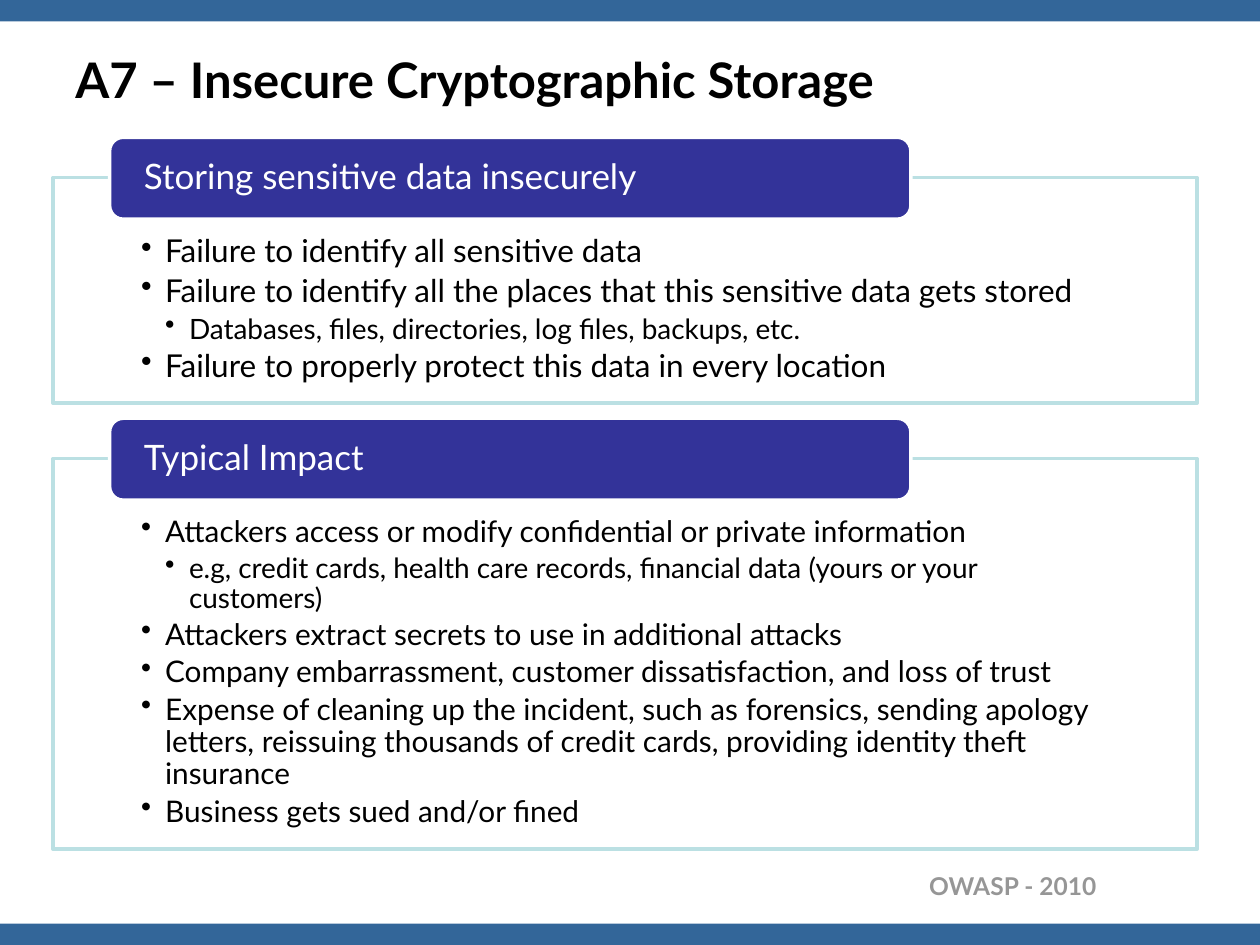
from dataclasses import dataclass

from lxml.etree import SubElement
from pptx import Presentation
from pptx.dml.color import RGBColor
from pptx.enum.shapes import MSO_SHAPE
from pptx.enum.text import MSO_ANCHOR, PP_ALIGN
from pptx.oxml.ns import qn
from pptx.util import Emu, Inches, Pt

WIDTH, HEIGHT = Inches(10), Inches(7.5)
FONT = "Lato"
BLACK, WHITE, GRAY = "000000", "FFFFFF", "969696"
BAR_BLUE, HEADER_BLUE, PALE_TEAL = "336699", "333399", "BBE0E3"
BAR_HEIGHT = 2.27
HEADER_RISE, HEADER_HEIGHT = 4.27, 8.67
INDENT = 0.19
LINE_SPACING = 0.9
GAP_PER_POINT = 0.18


@dataclass(frozen=True)
class Area:
    """Left, top, width and height in percent of the slide."""

    left: float
    top: float
    width: float
    height: float

    def lengths(self) -> tuple[Emu, Emu, Emu, Emu]:
        return (
            Emu(round(WIDTH * self.left / 100)),
            Emu(round(HEIGHT * self.top / 100)),
            Emu(round(WIDTH * self.width / 100)),
            Emu(round(HEIGHT * self.height / 100)),
        )


@dataclass(frozen=True)
class Bullet:
    text: str
    size: int
    level: int = 1


@dataclass(frozen=True)
class Section:
    heading: str
    top: float
    height: float
    bullets: tuple[Bullet, ...]


SECTIONS = (
    Section("Storing sensitive data insecurely", 18.8, 23.87, (
        Bullet("Failure to identify all sensitive data", 18),
        Bullet("Failure to identify all the places that this sensitive data gets stored", 18),
        Bullet("Databases, files, directories, log files, backups, etc.", 16, 2),
        Bullet("Failure to properly protect this data in every location", 18),
    )),
    Section("Typical Impact", 48.53, 41.33, (
        Bullet("Attackers access or modify confidential or private information", 17),
        Bullet("e.g, credit cards, health care records, financial data "
               "(yours or your customers)", 16, 2),
        Bullet("Attackers extract secrets to use in additional attacks", 17),
        Bullet("Company embarrassment, customer dissatisfaction, and loss of trust", 17),
        Bullet("Expense of cleaning up the incident, such as forensics, sending apology "
               "letters, reissuing thousands of credit cards, providing identity theft "
               "insurance", 17),
        Bullet("Business gets sued and/or fined", 17),
    )),
)


def color(code: str) -> RGBColor:
    return RGBColor.from_string(code)


def add_block(page, kind: MSO_SHAPE, area: Area, fill: str, line: str | None = None):
    block = page.shapes.add_shape(kind, *area.lengths())
    block.shadow.inherit = False
    block.fill.solid()
    block.fill.fore_color.rgb = color(fill)
    if line:
        block.line.color.rgb = color(line)
        block.line.width = Pt(2)
    else:
        block.line.fill.background()
    return block


def set_frame(frame, anchor: MSO_ANCHOR, sides: float, top: float, bottom: float) -> None:
    frame.word_wrap = True
    frame.vertical_anchor = anchor
    frame.margin_left = frame.margin_right = Inches(sides)
    frame.margin_top, frame.margin_bottom = Inches(top), Inches(bottom)


def write(para, text: str, size: int, code: str, bold: bool = False,
          align: PP_ALIGN = PP_ALIGN.LEFT) -> None:
    para.text = text
    para.alignment = align
    for span in para.runs:
        span.font.name = FONT
        span.font.size = Pt(size)
        span.font.bold = bold
        span.font.color.rgb = color(code)


def add_label(page, area: Area, text: str, size: int, code: str, anchor: MSO_ANCHOR,
              align: PP_ALIGN) -> None:
    box = page.shapes.add_textbox(*area.lengths())
    set_frame(box.text_frame, anchor, 0.1, 0.05, 0.05)
    write(box.text_frame.paragraphs[0], text, size, code, True, align)


def write_bullet(para, bullet: Bullet) -> None:
    write(para, bullet.text, bullet.size, BLACK)
    para.level = bullet.level
    para.line_spacing = LINE_SPACING
    para.space_before = Pt(0)
    para.space_after = Pt(bullet.size * GAP_PER_POINT)
    properties = para._p.get_or_add_pPr()
    properties.set("marL", str(Inches(INDENT * bullet.level)))
    properties.set("indent", str(-Inches(INDENT)))
    SubElement(properties, qn("a:buChar"), char="•")


def add_section(page, section: Section) -> None:
    panel = add_block(page, MSO_SHAPE.RECTANGLE,
                      Area(4.2, section.top, 90.8, section.height), WHITE, PALE_TEAL)
    frame = panel.text_frame
    set_frame(frame, MSO_ANCHOR.TOP, 0.7, 0.46, 0.12)
    for index, bullet in enumerate(section.bullets):
        write_bullet(frame.add_paragraph() if index else frame.paragraphs[0], bullet)

    header = add_block(page, MSO_SHAPE.ROUNDED_RECTANGLE,
                       Area(8.7, section.top - HEADER_RISE, 63.6, HEADER_HEIGHT),
                       HEADER_BLUE, WHITE)
    set_frame(header.text_frame, MSO_ANCHOR.MIDDLE, 0.24, 0, 0)
    heading = header.text_frame.paragraphs[0]
    write(heading, section.heading, 20, WHITE)
    heading.line_spacing = LINE_SPACING


def main() -> None:
    deck = Presentation()
    deck.slide_width, deck.slide_height = WIDTH, HEIGHT
    page = deck.slides.add_slide(deck.slide_layouts[6])
    for top in (0, 100 - BAR_HEIGHT):
        add_block(page, MSO_SHAPE.RECTANGLE, Area(0, top, 100, BAR_HEIGHT), BAR_BLUE)
    add_label(page, Area(54.2, 91.47, 33.8, 4.53), "OWASP - 2010", 14, GRAY,
              MSO_ANCHOR.TOP, PP_ALIGN.RIGHT)
    add_label(page, Area(5, 2.53, 90, 11.6), "A7 – Insecure Cryptographic Storage", 28,
              BLACK, MSO_ANCHOR.MIDDLE, PP_ALIGN.LEFT)
    for section in SECTIONS:
        add_section(page, section)
    deck.save("out.pptx")


if __name__ == "__main__":
    main()
